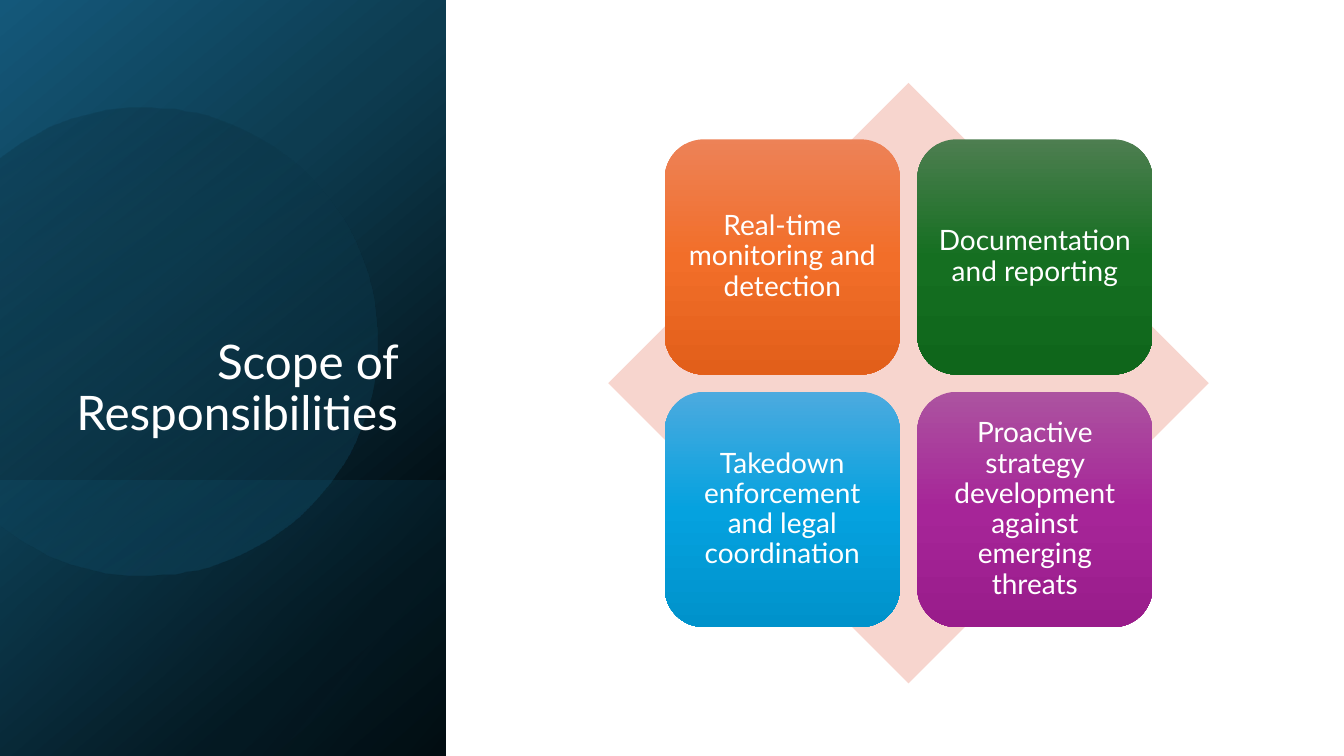
import math

from lxml import etree
from pptx import Presentation
from pptx import util as u
from pptx.dml.color import RGBColor
from pptx.enum import shapes, text
from pptx.oxml.ns import qn

# Content
TITLE = "Scope of Responsibilities"
CARDS = [
    ("Real-time monitoring and detection", ("ED8257", "F26E29", "E25F1A")),
    ("Documentation and reporting", ("4D7E50", "156F21", "0F661B")),
    ("Takedown enforcement and legal coordination", ("4CAADF", "05A2DF", "0092CB")),
    ("Proactive strategy development against emerging threats",
     ("AC53A0", "A62598", "991C8B")),
]

# Layout in points
WIDTH, HEIGHT = 960, 540
PANEL_WIDTH = 318.5
STRIP_TOP = 343
CIRCLE_X, CIRCLE_Y, RADIUS = 103, 244, 167
CENTER_X, CENTER_Y = 649, 273.7
DIAMOND = 429
CARD, GAP = 168, 12.4


def color(value):
    return RGBColor.from_string(value)


def fill_gradient(shape, stops, angle):
    """Stops are (position %, colour, opacity %); the angle runs clockwise."""
    shape.fill.gradient()
    gradient = shape._element.spPr.find(qn("a:gradFill"))
    stop_list = gradient.find(qn("a:gsLst"))
    for old_stop in list(stop_list):
        stop_list.remove(old_stop)
    for position, value, opacity in stops:
        stop = etree.SubElement(stop_list, qn("a:gs"), pos=str(position * 1000))
        rgb = etree.SubElement(stop, qn("a:srgbClr"), val=value)
        if opacity < 100:
            etree.SubElement(rgb, qn("a:alpha"), val=str(opacity * 1000))
    gradient.find(qn("a:lin")).set("ang", str(angle * 60000))


def plain(shape):
    shape.shadow.inherit = False
    shape.line.fill.background()
    return shape


def add_shape(slide, kind, left, top, width, height):
    return plain(slide.shapes.add_shape(
        kind, u.Pt(left), u.Pt(top), u.Pt(width), u.Pt(height)))


def write(shape, words, size, align, anchor, inset=7.2):
    frame = shape.text_frame
    frame.word_wrap = True
    frame.auto_size = text.MSO_AUTO_SIZE.NONE
    frame.vertical_anchor = anchor
    frame.margin_left = frame.margin_right = u.Pt(inset)
    frame.margin_top = frame.margin_bottom = u.Pt(min(inset, 6))
    paragraph = frame.paragraphs[0]
    paragraph.alignment = align
    paragraph.line_spacing = 0.9
    run = paragraph.add_run()
    run.text = words
    run.font.size = u.Pt(size)
    run.font.name = "Lato"
    run.font.color.rgb = color("FFFFFF")


def add_panel(slide):
    rectangle = shapes.MSO_SHAPE.RECTANGLE
    base = add_shape(slide, rectangle, 0, 0, PANEL_WIDTH, HEIGHT)
    fill_gradient(base, [(0, "14587A", 100), (35, "0D3C50", 100),
                         (82, "010A0E", 100), (100, "000000", 100)], 50)
    strip = add_shape(slide, rectangle, 0, STRIP_TOP, PANEL_WIDTH, HEIGHT - STRIP_TOP)
    fill_gradient(strip, [(0, "156082", 29), (100, "0A3040", 30)], 40)

    # Circle cut off at the left edge of the slide
    limit = math.acos(-CIRCLE_X / RADIUS)
    steps = 90
    angles = [limit * (2 * step / steps - 1) for step in range(steps + 1)]
    points = [(CIRCLE_X + RADIUS * math.cos(angle), CIRCLE_Y + RADIUS * math.sin(angle))
              for angle in angles]
    builder = slide.shapes.build_freeform(*points[0], scale=u.Pt(1))
    builder.add_line_segments(points[1:], close=True)
    circle = plain(builder.convert_to_shape())
    fill_gradient(circle, [(0, "000000", 12), (30, "0A3040", 20),
                           (100, "156082", 36)], 60)


def add_title(slide):
    title = slide.shapes.title
    slide.shapes._spTree.append(title._element)  # bring in front of the panel
    title.left, title.top = u.Pt(46), u.Pt(132.5)
    title.width, title.height = u.Pt(245.5), u.Pt(188.5)
    write(title, TITLE, 34, text.PP_ALIGN.RIGHT, text.MSO_ANCHOR.BOTTOM)


def add_matrix(slide):
    diamond = add_shape(slide, shapes.MSO_SHAPE.DIAMOND, CENTER_X - DIAMOND / 2,
                        CENTER_Y - DIAMOND / 2, DIAMOND, DIAMOND)
    diamond.fill.solid()
    diamond.fill.fore_color.rgb = color("F7D5CE")

    # Two by two cards around the centre of the diamond
    for index, (words, shades) in enumerate(CARDS):
        row, column = divmod(index, 2)
        left = CENTER_X - CARD - GAP / 2 + column * (CARD + GAP)
        top = CENTER_Y - CARD - GAP / 2 + row * (CARD + GAP)
        card = add_shape(slide, shapes.MSO_SHAPE.ROUNDED_RECTANGLE, left, top, CARD, CARD)
        fill_gradient(card, [(50 * step, shade, 100)
                             for step, shade in enumerate(shades)], 90)
        write(card, words, 20, text.PP_ALIGN.CENTER, text.MSO_ANCHOR.MIDDLE, inset=6)


def main():
    presentation = Presentation()
    presentation.slide_width, presentation.slide_height = u.Pt(WIDTH), u.Pt(HEIGHT)
    slide = presentation.slides.add_slide(presentation.slide_layouts[5])
    add_panel(slide)
    add_title(slide)
    add_matrix(slide)
    presentation.save("out.pptx")


if __name__ == "__main__":
    main()
